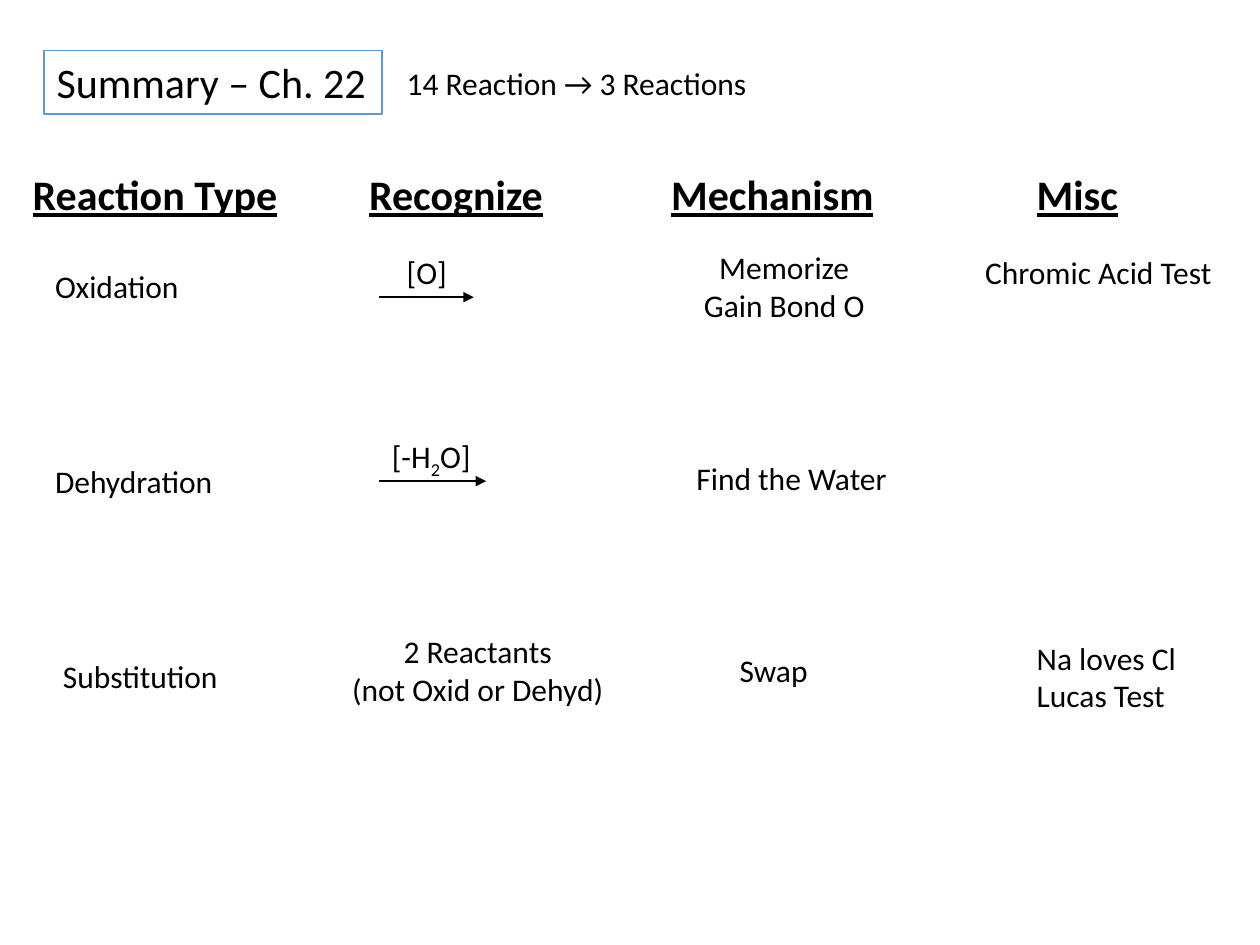
import pptx
import pptx.dml.color
import pptx.enum.shapes
import pptx.enum.text
import pptx.oxml
import pptx.oxml.ns
import pptx.util

Cm = pptx.util.Cm
Pt = pptx.util.Pt


def color(code):
    return pptx.dml.color.RGBColor.from_string(code)


class Board:
    font = "Calibri"
    ink = "000000"
    paper = "FFFFFF"
    edge = "5B9BD5"
    large = 24
    small = 18

    def __init__(self, slide):
        self.slide = slide

    def style(self, run, size, bold=False):
        run.font.name = self.font
        run.font.size = Pt(size)
        run.font.bold = bold
        run.font.underline = bold
        run.font.color.rgb = color(self.ink)

    def text(self, words, left, top, width, size=small, bold=False,
             center=False, home=None):
        lines = words.count("\n") + 1
        height = 0.25 + lines * size * 0.043
        shapes = (home or self.slide).shapes
        box = shapes.add_textbox(Cm(left), Cm(top), Cm(width), Cm(height))
        frame = box.text_frame
        frame.text = words
        frame.word_wrap = False
        frame.auto_size = pptx.enum.text.MSO_AUTO_SIZE.SHAPE_TO_FIT_TEXT
        for para in frame.paragraphs:
            if center:
                para.alignment = pptx.enum.text.PP_ALIGN.CENTER
            for run in para.runs:
                self.style(run, size, bold)
        return box

    def title(self, words, left, top, width):
        box = self.text(words, left, top, width, self.large)
        box.fill.solid()
        box.fill.fore_color.rgb = color(self.paper)
        box.line.color.rgb = color(self.edge)
        box.line.width = Pt(1)

    def head(self, words, left, width):
        self.text(words, left, 3.28, width, self.large, bold=True)

    def arrow(self, home, left, top, width):
        line = home.shapes.add_connector(
            pptx.enum.shapes.MSO_CONNECTOR.STRAIGHT,
            Cm(left), Cm(top), Cm(left + width), Cm(top))
        line.line.color.rgb = color(self.ink)
        line.line.width = Pt(1)
        space = pptx.oxml.ns.nsdecls("a")
        tip = pptx.oxml.parse_xml(f'<a:tailEnd {space} type="triangle"/>')
        line.line._get_or_add_ln().append(tip)
        plain = pptx.oxml.parse_xml(f"<a:effectLst {space}/>")
        line._element.spPr.append(plain)

    def step(self, parts, left, top, width, start, length):
        group = self.slide.shapes.add_group_shape()
        self.arrow(group, start, top + 1.01, length)
        box = self.text(parts[0], left, top, width, home=group)
        for spot, part in enumerate(parts[1:], 1):
            run = box.text_frame.paragraphs[0].add_run()
            run.text = part
            self.style(run, self.small)
            if spot % 2:
                run._r.get_or_add_rPr().set("baseline", "-25000")


def main():
    deck = pptx.Presentation()
    deck.slide_width = Cm(25.4)
    deck.slide_height = Cm(19.05)
    board = Board(deck.slides.add_slide(deck.slide_layouts[6]))

    board.title("Summary – Ch. 22", 0.89, 1.02, 6.81)
    board.text("14 Reaction → 3 Reactions", 7.95, 1.17, 7.44)

    for words, left, width in (
        ("Reaction Type", 0.41, 5.51),
        ("Recognize", 7.19, 4.06),
        ("Mechanism", 13.28, 4.65),
        ("Misc", 20.65, 2.16),
    ):
        board.head(words, left, width)

    board.text("Oxidation", 0.86, 5.26, 3.02)
    board.step(["[O]"], 7.95, 4.98, 1.32, 7.65, 1.9)
    board.text("Memorize\nGain Bond O", 13.92, 4.88, 3.78, center=True)
    board.text("Chromic Acid Test", 19.61, 4.98, 5.13)

    board.text("Dehydration", 0.86, 9.19, 3.73)
    board.step(["[-H", "2", "O]"], 7.65, 8.69, 2.13, 7.65, 2.15)
    board.text("Find the Water", 13.79, 9.12, 4.39)

    board.text("Substitution", 1.02, 13.13, 3.68)
    board.text("2 Reactants\n(not Oxid or Dehyd)", 6.81, 12.62, 5.64,
               center=True)
    board.text("Swap", 14.66, 13, 1.9)
    board.text("Na loves Cl\nLucas Test", 20.65, 12.75, 3.35)

    deck.save("out.pptx")


if __name__ == "__main__":
    main()
